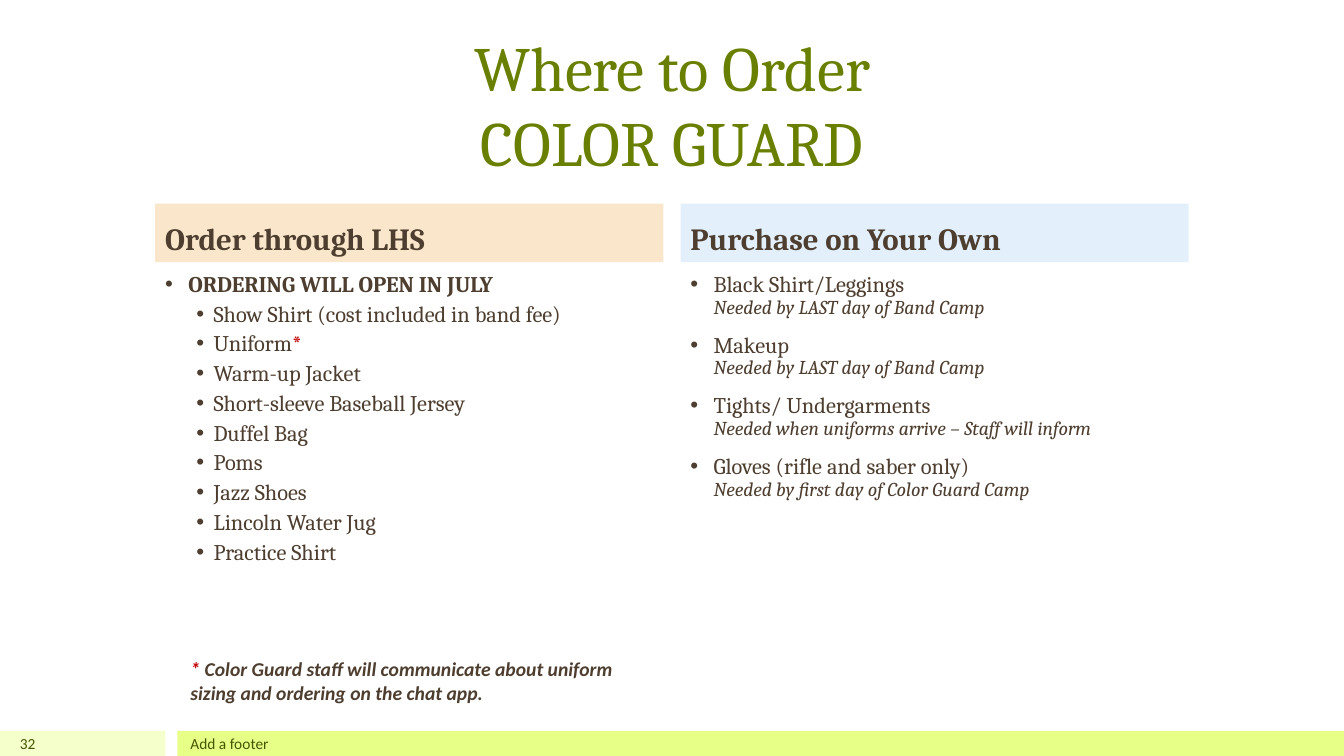
from dataclasses import dataclass

from lxml import etree
from pptx import Presentation
from pptx.dml.color import RGBColor
from pptx.enum.shapes import MSO_SHAPE
from pptx.enum.text import MSO_ANCHOR, PP_ALIGN
from pptx.oxml.ns import qn
from pptx.util import Pt

RECT = MSO_SHAPE.RECTANGLE
TOP, MIDDLE, BOTTOM = MSO_ANCHOR.TOP, MSO_ANCHOR.MIDDLE, MSO_ANCHOR.BOTTOM
LEFT, CENTER, RIGHT = PP_ALIGN.LEFT, PP_ALIGN.CENTER, PP_ALIGN.RIGHT
PX = 9144


@dataclass(frozen=True)
class Theme:
    serif: str = "Cambria"
    sans: str = "Calibri"
    ink: str = "4D3E2F"
    title: str = "687F00"
    footer: str = "455500"
    accent: str = "C00000"
    peach: str = "F9E6CB"
    sky: str = "E3EFFB"
    pale_lime: str = "F4FFCB"
    lime: str = "E8FF87"
    title_size: int = 45
    heading_size: int = 22
    body_size: int = 16
    note_size: int = 14
    footer_size: int = 11


def add_run(p, text, size, font, color, bold=False, italic=False):
    for i, line in enumerate(text.split("\n")):
        if i:
            p.add_line_break()
        if line:
            r = p.add_run()
            r.text = line
            r.font.size = Pt(size)
            r.font.name = font
            r.font.color.rgb = RGBColor.from_string(color)
            r.font.bold = bold
            r.font.italic = italic


class Deck:
    def __init__(self, theme, width, height):
        self.theme = theme
        self.prs = Presentation()
        self.prs.slide_width = width * PX
        self.prs.slide_height = height * PX
        self.s = self.prs.slides.add_slide(self.prs.slide_layouts[6])

    def bar(self, x, y, w, h, fill):
        sp = self.s.shapes.add_shape(RECT, x * PX, y * PX, w * PX, h * PX)
        sp.shadow.inherit = False
        sp.fill.solid()
        sp.fill.fore_color.rgb = RGBColor.from_string(fill)
        sp.line.fill.background()
        return sp

    def frame(self, x, y, w, h, anchor=TOP):
        sp = self.s.shapes.add_textbox(x * PX, y * PX, w * PX, h * PX)
        tf = sp.text_frame
        tf.word_wrap = True
        tf.vertical_anchor = anchor
        return tf

    def label(self, tf, runs, align=LEFT, **fmt):
        p = tf.paragraphs[0]
        p.alignment = align
        for text, extra in runs:
            add_run(p, text, **{**fmt, **extra})
        return p

    def heading(self, x, y, w, h, text, fill):
        t = self.theme
        tf = self.bar(x, y, w, h, fill).text_frame
        tf.word_wrap = True
        tf.vertical_anchor = BOTTOM
        p = self.label(tf, [(text, {})], size=t.heading_size,
                       font=t.serif, color=t.ink, bold=True)
        p.line_spacing = 0.9

    def bullets(self, x, y, w, h, items, space):
        t = self.theme
        tf = self.frame(x, y, w, h)
        for i, (level, runs) in enumerate(items):
            p = tf.add_paragraph() if i else tf.paragraphs[0]
            p.level = level
            p.line_spacing = 0.9
            p.space_before = Pt(space if i else 0)
            margin, hang = ((23, 23), (48, 17))[level]
            pPr = p._p.get_or_add_pPr()
            pPr.set("marL", str(margin * PX))
            pPr.set("indent", str(-hang * PX))
            clr = etree.SubElement(pPr, qn("a:buClr"))
            etree.SubElement(clr, qn("a:srgbClr"), val=t.ink)
            etree.SubElement(pPr, qn("a:buFont"), typeface="Arial")
            etree.SubElement(pPr, qn("a:buChar"), char="•")
            for text, extra in runs:
                fmt = {"size": t.body_size, "font": t.serif, "color": t.ink}
                add_run(p, text, **{**fmt, **extra})


def main():
    t = Theme()
    deck = Deck(t, 1333, 750)
    deck.bar(0, 725, 164, 25, t.pale_lime)
    deck.bar(176, 725, 1157, 25, t.lime)

    deck.label(deck.frame(154, 30, 1025, 153, BOTTOM),
               [("Where to Order\nCOLOR GUARD", {})], CENTER,
               size=t.title_size, font=t.serif, color=t.title)

    red = {"color": t.accent}
    school_items = ["Show Shirt (cost included in band fee)", "Uniform",
                    "Warm-up Jacket", "Short-sleeve Baseball Jersey",
                    "Duffel Bag", "Poms", "Jazz Shoes", "Lincoln Water Jug",
                    "Practice Shirt"]
    school = [(0, [("ORDERING WILL OPEN IN JULY", {"bold": True})])]
    for item in school_items:
        star = [("*", red)] if item == "Uniform" else []
        school.append((1, [(item, {})] + star))

    own_items = [
        ("Black Shirt/Leggings", "Needed by LAST day of Band Camp"),
        ("Makeup", "Needed by LAST day of Band Camp"),
        ("Tights/ Undergarments",
         "Needed when uniforms arrive – Staff will inform"),
        ("Gloves (rifle and saber only)",
         "Needed by first day of Color Guard Camp"),
    ]
    due = {"size": t.note_size, "italic": True}
    own = [(0, [(item + "\n", {}), (when, due)]) for item, when in own_items]

    columns = [("Order through LHS", t.peach, school, 4),
               ("Purchase on Your Own", t.sky, own, 11)]
    for i, (text, fill, items, space) in enumerate(columns):
        x = 154 + i * 521
        deck.heading(x, 202, 504, 58, text, fill)
        deck.bullets(x, 266, 504, 417, items, space)

    small = {"size": t.footer_size, "font": t.sans, "color": t.footer}
    deck.label(deck.frame(0, 725, 45, 25, MIDDLE), [("32", {})],
               RIGHT, **small)
    deck.label(deck.frame(179, 725, 1000, 25, MIDDLE),
               [("Add a footer", {})], **small)
    deck.label(deck.frame(179, 647, 448, 57),
               [("* ", red),
                ("Color Guard staff will communicate about uniform "
                 "sizing and ordering on the chat app.", {})],
               size=t.note_size, font=t.sans, color=t.ink,
               bold=True, italic=True)
    deck.prs.save("out.pptx")


if __name__ == "__main__":
    main()
